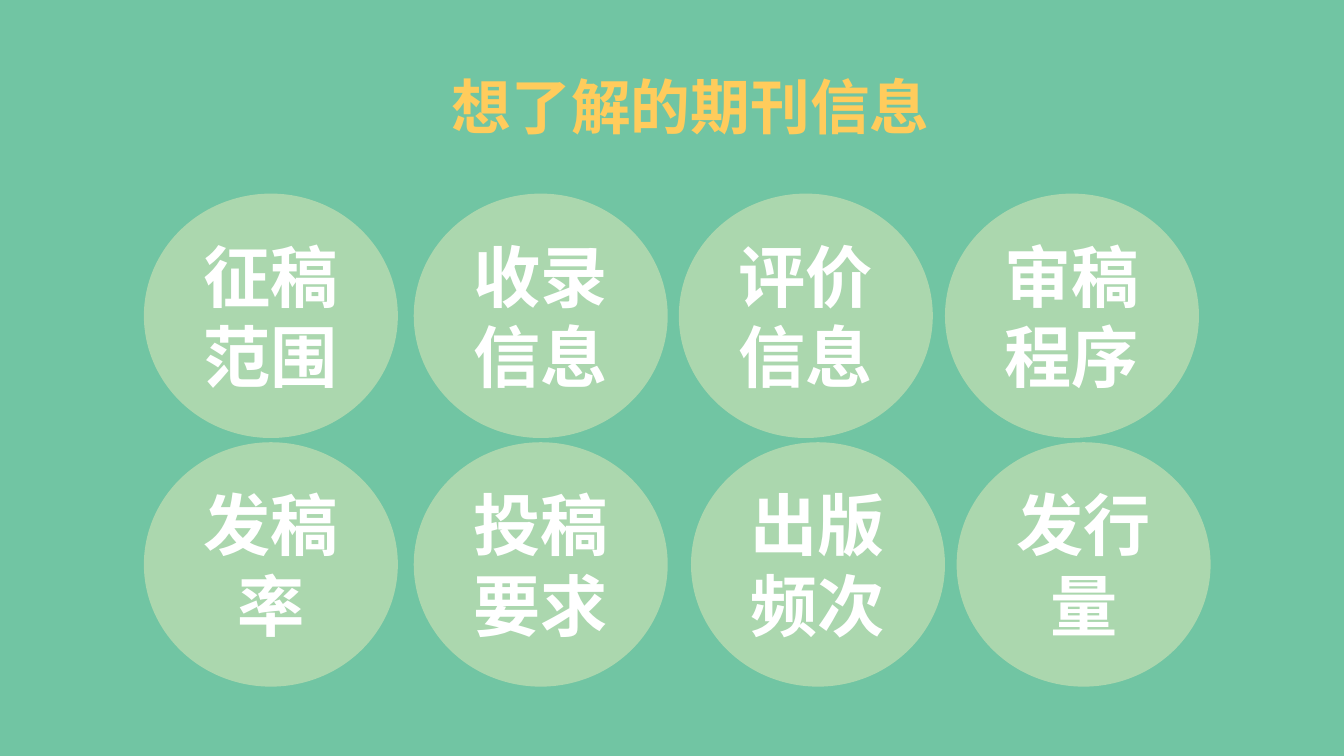
import dataclasses

import pptx
import pptx.dml.color
import pptx.enum.shapes
import pptx.enum.text
import pptx.oxml
import pptx.oxml.ns
import pptx.util
from pptx.util import Cm


@dataclasses.dataclass(frozen=True)
class Theme:
    font: str = "Noto Sans CJK SC"
    background: str = "71C5A3"
    circle: str = "C5E0B4"
    circle_alpha: int = 70
    title: str = "FFCC5C"
    label: str = "FFFFFF"
    title_size: int = 32
    label_size: int = 36


def color(value):
    return pptx.dml.color.RGBColor.from_string(value)


def child(parent, tag, **attributes):
    element = parent.makeelement(pptx.oxml.ns.qn(tag), attributes)
    parent.append(element)
    return element


def write_text(frame, text, *, font, size, fill, anchor):
    frame.word_wrap = True
    frame.auto_size = pptx.enum.text.MSO_AUTO_SIZE.NONE
    frame.vertical_anchor = anchor
    frame.text = text
    for paragraph in frame.paragraphs:
        paragraph.alignment = pptx.enum.text.PP_ALIGN.CENTER
        for run in paragraph.runs:
            run.font.name = font
            run.font.size = pptx.util.Pt(size)
            run.font.bold = True
            run.font.color.rgb = color(fill)
            child(run.font._element, "a:ea", typeface=font)


class SlideBuilder:
    def __init__(self, slide, theme):
        self.slide = slide
        self.theme = theme

    def background(self):
        fill = self.slide.background.fill
        fill.solid()
        fill.fore_color.rgb = color(self.theme.background)

    def title(self, text, left, top, width, height):
        shape = self.slide.shapes.title
        shape.left, shape.top = Cm(left), Cm(top)
        shape.width, shape.height = Cm(width), Cm(height)
        write_text(shape.text_frame, text, font=self.theme.font,
                   size=self.theme.title_size, fill=self.theme.title,
                   anchor=pptx.enum.text.MSO_ANCHOR.MIDDLE)

    def circle(self, text, left, top, width, height):
        shape = self.slide.shapes.add_shape(
            pptx.enum.shapes.MSO_SHAPE.OVAL,
            Cm(left), Cm(top), Cm(width), Cm(height))
        shape.shadow.inherit = False
        shape.line.fill.background()
        shape.fill.solid()
        shape.fill.fore_color.rgb = color(self.theme.circle)
        solid = shape._element.spPr.find(pptx.oxml.ns.qn("a:solidFill"))
        child(solid[0], "a:alpha", val=str(self.theme.circle_alpha * 1000))
        write_text(shape.text_frame, text, font=self.theme.font,
                   size=self.theme.label_size, fill=self.theme.label,
                   anchor=pptx.enum.text.MSO_ANCHOR.MIDDLE)


def main():
    presentation = pptx.Presentation()
    presentation.slide_width = Cm(25.4)
    presentation.slide_height = Cm(14.29)
    slide = presentation.slides.add_slide(presentation.slide_layouts[5])
    builder = SlideBuilder(slide, Theme())
    builder.background()
    builder.title("想了解的期刊信息", 5.89, 1.19, 14.33, 1.63)

    rows = [
        (3.66, [2.72, 7.82, 12.83, 17.86],
         ["征稿\n范围", "收录信息", "评价信息", "审稿程序"]),
        (8.36, [2.72, 7.82, 13.06, 18.08],
         ["发稿率", "投稿要求", "出版频次", "发行量"]),
    ]
    for top, lefts, labels in rows:
        for left, label in zip(lefts, labels):
            builder.circle(label, left, top, 4.8, 4.62)

    presentation.save("out.pptx")


if __name__ == "__main__":
    main()
